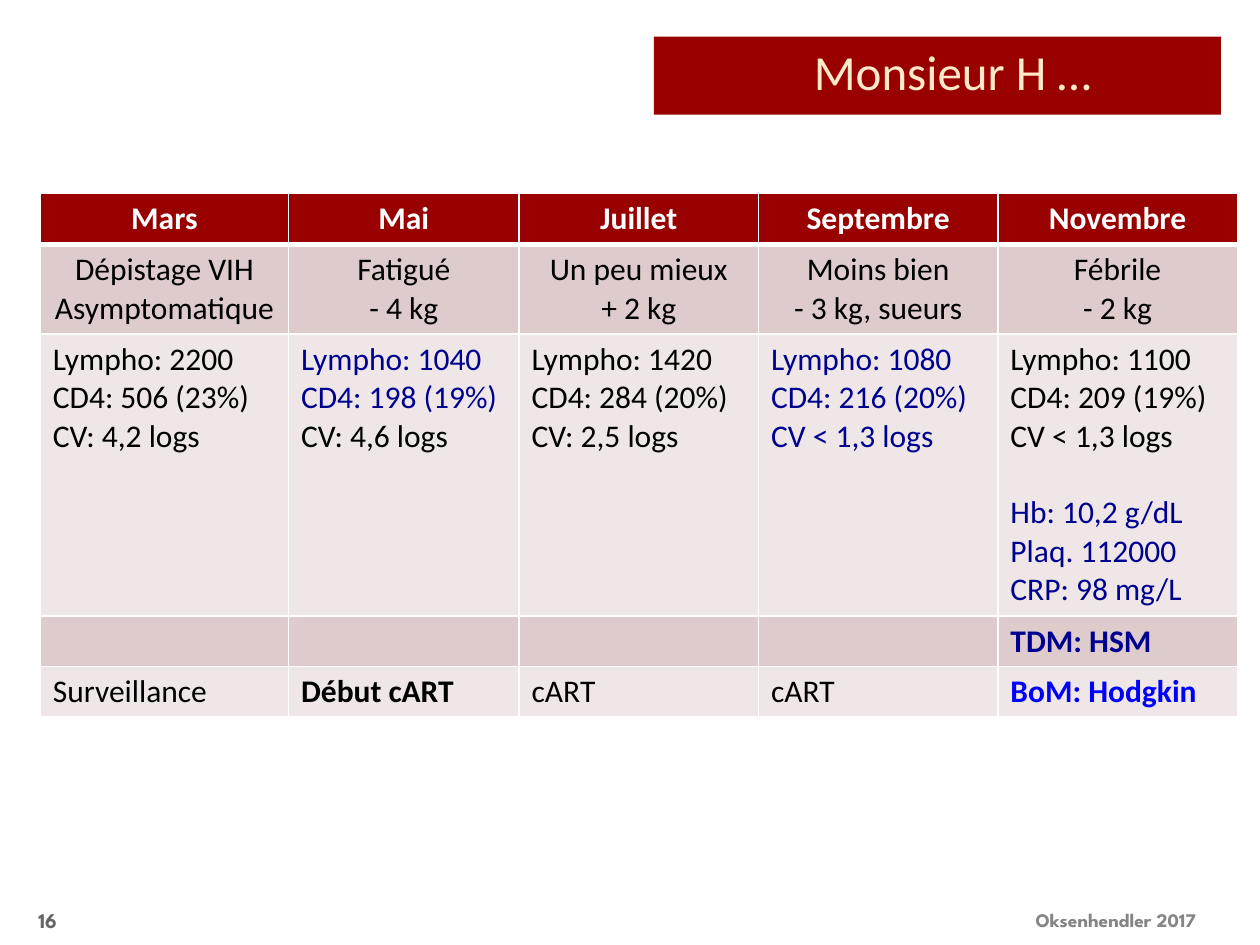
from dataclasses import dataclass

from lxml import etree
from pptx import Presentation
from pptx import util as u
from pptx.dml.color import RGBColor
from pptx.enum import shapes, text
from pptx.oxml import ns


@dataclass(frozen=True)
class Theme:
    red: str = "990000"
    cream: str = "FFE9C8"
    white: str = "FFFFFF"
    black: str = "000000"
    navy: str = "000090"
    blue: str = "0000FF"
    band_dark: str = "DECCCC"
    band_light: str = "EFE7E7"
    footer: str = "858585"
    number: str = "666666"
    body_font: str = "Calibri"
    footer_font: str = "League Spartan"
    title_size: int = 28
    table_size: int = 18
    footer_size: int = 11
    number_size: int = 12


theme = Theme()


def write(paragraph, words, color, size, name=theme.body_font, bold=False):
    run = paragraph.add_run()
    run.text = words
    for attribute, value in {"name": name, "size": u.Pt(size), "bold": bold}.items():
        setattr(run.font, attribute, value)
    run.font.color.rgb = RGBColor.from_string(color)


def add_border(cell, tag, position, points):
    line = etree.Element(ns.qn(tag), w=str(u.Pt(points)))
    fill = etree.SubElement(line, ns.qn("a:solidFill"))
    etree.SubElement(fill, ns.qn("a:srgbClr"), val=theme.white)
    cell._tc.get_or_add_tcPr().insert(position, line)


presentation = Presentation()
presentation.slide_width = u.Inches(10)
presentation.slide_height = u.Inches(7.5)
slide = presentation.slides.add_slide(presentation.slide_layouts[5])

banner = slide.shapes.add_shape(
    shapes.MSO_SHAPE.RECTANGLE,
    u.Inches(5.19), u.Inches(0.29), u.Inches(4.5), u.Inches(0.62))
banner.shadow.inherit = False
banner.fill.solid()
banner.fill.fore_color.rgb = RGBColor.from_string(theme.red)
banner.line.fill.background()

title = slide.shapes.title
title_place = {"left": 6.36, "top": 0.23, "width": 2.54, "height": 0.62}
for attribute, value in title_place.items():
    setattr(title, attribute, u.Inches(value))
title_format = {
    "vertical_anchor": text.MSO_ANCHOR.BOTTOM,
    "auto_size": text.MSO_AUTO_SIZE.NONE,
    "word_wrap": True,
}
for attribute, value in title_format.items():
    setattr(title.text_frame, attribute, value)
title.text_frame.paragraphs[0].alignment = text.PP_ALIGN.LEFT
write(title.text_frame.paragraphs[0], "Monsieur H …", theme.cream, theme.title_size)
slide.shapes._spTree.remove(banner._element)
title._element.addprevious(banner._element)

footers = [
    ("Oksenhendler 2017", 8.12, 1.88, text.PP_ALIGN.LEFT, theme.footer, theme.footer_size),
    ("16", 0, 0.55, text.PP_ALIGN.RIGHT, theme.number, theme.number_size),
]
for words, left, width, alignment, color, size in footers:
    box = slide.shapes.add_textbox(
        u.Inches(left), u.Inches(7.1), u.Inches(width), u.Inches(0.4))
    box.text_frame.word_wrap = True
    box.text_frame.vertical_anchor = text.MSO_ANCHOR.MIDDLE
    paragraph = box.text_frame.paragraphs[0]
    paragraph.alignment = alignment
    write(paragraph, words, color, size, theme.footer_font, True)

visits = [
    ["Mars", "Mai", "Juillet", "Septembre", "Novembre"],
    ["Dépistage VIH\nAsymptomatique", "Fatigué\n- 4 kg", "Un peu mieux\n+ 2 kg",
     "Moins bien\n- 3 kg, sueurs", "Fébrile\n- 2 kg"],
    ["Lympho: 2200\nCD4: 506 (23%)\nCV: 4,2 logs",
     "Lympho: 1040\nCD4: 198 (19%)\nCV: 4,6 logs",
     "Lympho: 1420\nCD4: 284 (20%)\nCV: 2,5 logs",
     "Lympho: 1080\nCD4: 216 (20%)\nCV < 1,3 logs",
     "Lympho: 1100\nCD4: 209 (19%)\nCV < 1,3 logs\n"
     "Hb: 10,2 g/dL\nPlaq. 112000\nCRP: 98 mg/L"],
    ["", "", "", "", "TDM: HSM"],
    ["Surveillance", "Début cART", "cART", "cART", "BoM: Hodgkin"],
]
accents = {
    (2, 1): (range(0, 2), theme.navy, False),
    (2, 3): (range(0, 3), theme.navy, False),
    (2, 4): (range(3, 6), theme.navy, False),
    (3, 4): (range(0, 1), theme.navy, True),
    (4, 1): (range(0, 1), theme.black, True),
    (4, 4): (range(0, 1), theme.blue, True),
}
column_widths = [1.97, 1.83, 1.9, 1.9, 1.9]
row_heights = [0.41, 0.71, 2.24, 0.4, 0.4]

table = slide.shapes.add_table(
    len(row_heights), len(column_widths), u.Inches(0.32), u.Inches(1.53),
    u.Inches(sum(column_widths)), u.Inches(sum(row_heights))).table
for column, width in zip(table.columns, column_widths):
    column.width = u.Inches(width)

for row_index, (row, height) in enumerate(zip(visits, row_heights)):
    table.rows[row_index].height = u.Inches(height)
    header = row_index == 0
    band = theme.band_dark if row_index % 2 else theme.band_light
    for column_index, words in enumerate(row):
        cell = table.cell(row_index, column_index)
        cell.fill.solid()
        cell.fill.fore_color.rgb = RGBColor.from_string(theme.red if header else band)
        borders = {"a:lnL": 1, "a:lnR": 1,
                   "a:lnT": 3 if row_index == 1 else 1, "a:lnB": 3 if header else 1}
        for position, (tag, points) in enumerate(borders.items()):
            add_border(cell, tag, position, points)
        accent_lines, accent_color, accent_bold = accents.get(
            (row_index, column_index), ((), theme.black, False))
        for line_index, line in enumerate(words.split("\n")):
            frame = cell.text_frame
            paragraph = frame.add_paragraph() if line_index else frame.paragraphs[0]
            paragraph.alignment = (
                text.PP_ALIGN.CENTER if row_index < 2 else text.PP_ALIGN.LEFT)
            if line_index == 3:
                paragraph.space_before = u.Pt(22)
            accented = line_index in accent_lines
            color = accent_color if accented else theme.white if header else theme.black
            if line:
                write(paragraph, line, color, theme.table_size,
                      bold=header or (accented and accent_bold))

presentation.save("out.pptx")
